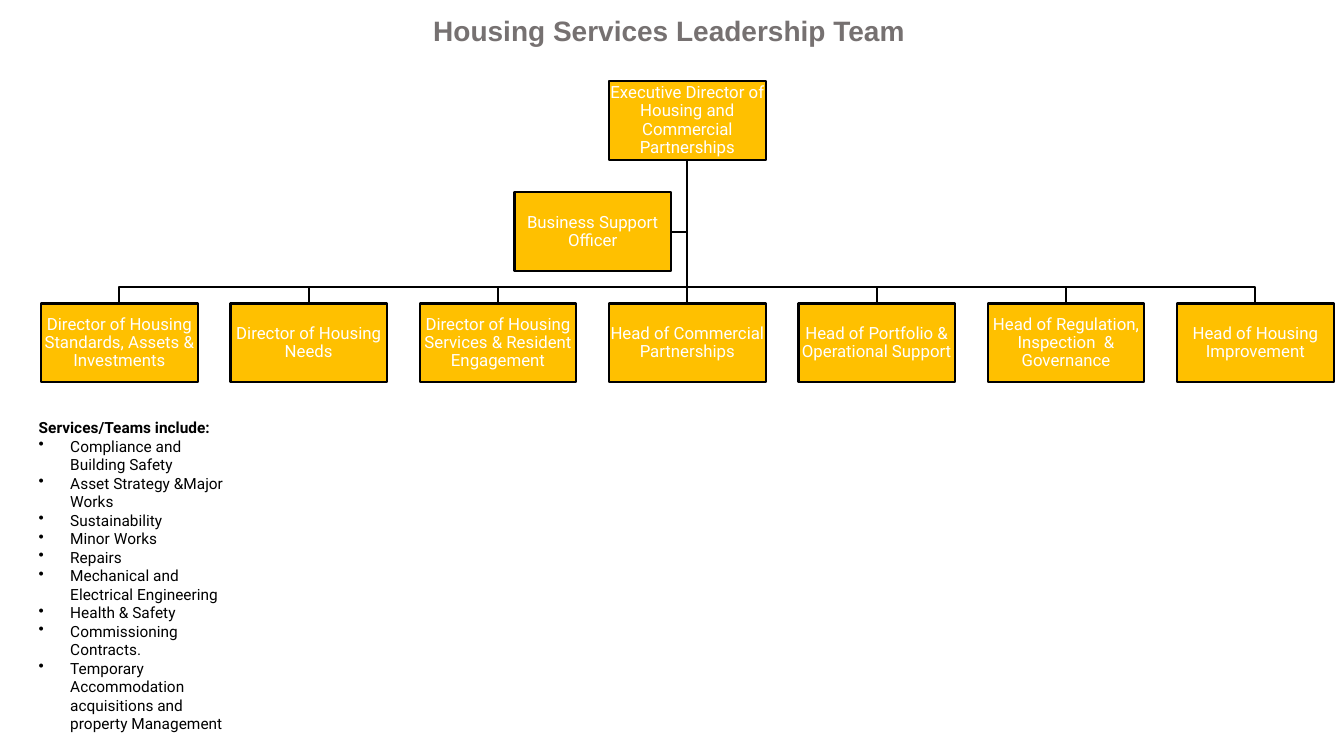
import pptx
import pptx.util
import pptx.dml.color
import pptx.enum.shapes
import pptx.enum.text
from lxml import etree

Pt = pptx.util.Pt
ALIGN = pptx.enum.text.PP_ALIGN
ANCHOR = pptx.enum.text.MSO_ANCHOR
COLOURS = {"box": "FFC000", "line": "000000", "label": "FFFFFF",
           "title": "767171", "body": "000000"}
BOX_W, BOX_H = 111.8, 56.2
FIRST_LEFT, COLUMN_STEP = 29.4, 135.24
EXECUTIVE_TOP, SUPPORT_TOP, DIRECTORS_TOP = 58, 137.4, 216.8
SUPPORT_LEFT = 367.5
BUS_Y = 205.2

DIRECTORS = [
    "Director of Housing Standards, Assets & Investments",
    "Director of Housing Needs",
    "Director of Housing Services & Resident Engagement",
    "Head of Commercial Partnerships",
    "Head of Portfolio & Operational Support",
    "Head of Regulation, Inspection  & Governance",
    "Head of Housing Improvement",
]
SERVICES = [
    "Compliance and Building Safety",
    "Asset Strategy &Major Works",
    "Sustainability",
    "Minor Works",
    "Repairs",
    "Mechanical and Electrical Engineering",
    "Health & Safety",
    "Commissioning Contracts.",
    "Temporary Accommodation acquisitions and property Management",
]


class OrgChart:
    def __init__(self, slide):
        self.slide = slide
        self.shapes = slide.shapes

    def colour(self, name):
        return pptx.dml.color.RGBColor.from_string(COLOURS[name])

    def style_font(self, paragraph, face, size, colour, bold=False):
        font = paragraph.font
        font.name, font.size, font.bold = face, Pt(size), bold
        font.color.rgb = self.colour(colour)

    def style_line(self, shape):
        shape.line.color.rgb = self.colour("line")
        shape.line.width = Pt(1.5)

    def title(self, text, left, top, width, height):
        heading = self.shapes.title
        heading.left, heading.top = Pt(left), Pt(top)
        heading.width, heading.height = Pt(width), Pt(height)
        frame = heading.text_frame
        frame.text = text
        frame.word_wrap = True
        frame.auto_size = pptx.enum.text.MSO_AUTO_SIZE.NONE
        frame.vertical_anchor = ANCHOR.BOTTOM
        paragraph = frame.paragraphs[0]
        paragraph.alignment = ALIGN.CENTER
        paragraph.line_spacing = 0.9
        self.style_font(paragraph, "Arial", 20, "title", True)

    def elbow(self, points):
        builder = self.shapes.build_freeform(*map(Pt, points[0]))
        builder.add_line_segments([tuple(map(Pt, p)) for p in points[1:]], close=False)
        branch = builder.convert_to_shape()
        branch.shadow.inherit = False
        branch.fill.background()
        self.style_line(branch)

    def straight(self, x, top, bottom):
        trunk = self.shapes.add_connector(
            pptx.enum.shapes.MSO_CONNECTOR.STRAIGHT, Pt(x), Pt(top), Pt(x), Pt(bottom))
        etree.SubElement(trunk._element.spPr, pptx.oxml.ns.qn("a:effectLst"))
        self.style_line(trunk)

    def role(self, text, left, top):
        box = self.shapes.add_shape(pptx.enum.shapes.MSO_SHAPE.RECTANGLE,
                                    Pt(left), Pt(top), Pt(BOX_W), Pt(BOX_H))
        box.shadow.inherit = False
        box.fill.solid()
        box.fill.fore_color.rgb = self.colour("box")
        self.style_line(box)
        frame = box.text_frame
        frame.text = text
        frame.word_wrap = True
        frame.vertical_anchor = ANCHOR.MIDDLE
        frame.margin_left = frame.margin_right = Pt(0.6)
        frame.margin_top = frame.margin_bottom = Pt(0.6)
        paragraph = frame.paragraphs[0]
        paragraph.alignment = ALIGN.CENTER
        paragraph.line_spacing = 0.9
        self.style_font(paragraph, "Roboto", 12, "label")

    def bullet_list(self, heading, items, left, top, width, height):
        frame = self.shapes.add_textbox(
            Pt(left), Pt(top), Pt(width), Pt(height)).text_frame
        frame.word_wrap = True
        frame.text = heading
        self.style_font(frame.paragraphs[0], "Roboto", 11, "body", True)
        for item in items:
            paragraph = frame.add_paragraph()
            paragraph.text = item
            properties = paragraph._p.get_or_add_pPr()
            properties.set("marL", str(Pt(22.5)))
            properties.set("indent", str(Pt(-22.5)))
            bullet = etree.SubElement(properties, pptx.oxml.ns.qn("a:buChar"))
            bullet.set("char", "•")
            self.style_font(paragraph, "Roboto", 11, "body")


def main():
    presentation = pptx.Presentation()
    presentation.slide_width, presentation.slide_height = Pt(960), Pt(540)
    chart = OrgChart(presentation.slides.add_slide(presentation.slide_layouts[5]))
    chart.title("Housing Services Leadership Team", 29, 8, 898, 29.5)

    lefts = [FIRST_LEFT + i * COLUMN_STEP for i in range(len(DIRECTORS))]
    executive_left = lefts[len(lefts) // 2]
    trunk_x = executive_left + BOX_W / 2
    trunk_top = EXECUTIVE_TOP + BOX_H
    support_y = SUPPORT_TOP + BOX_H / 2

    chart.elbow([(trunk_x, trunk_top), (trunk_x, support_y),
                 (SUPPORT_LEFT + BOX_W, support_y)])
    for left in lefts:
        if left == executive_left:
            chart.straight(trunk_x, trunk_top, DIRECTORS_TOP)
        else:
            x = left + BOX_W / 2
            chart.elbow([(trunk_x, trunk_top), (trunk_x, BUS_Y),
                         (x, BUS_Y), (x, DIRECTORS_TOP)])

    chart.role("Executive Director of Housing and Commercial Partnerships",
               executive_left, EXECUTIVE_TOP)
    for left, director in zip(lefts, DIRECTORS):
        chart.role(director, left, DIRECTORS_TOP)
    chart.role("Business Support Officer", SUPPORT_LEFT, SUPPORT_TOP)
    chart.bullet_list("Services/Teams include:", SERVICES, 20.6, 295.2, 155.5, 234)
    presentation.save("out.pptx")


if __name__ == "__main__":
    main()
